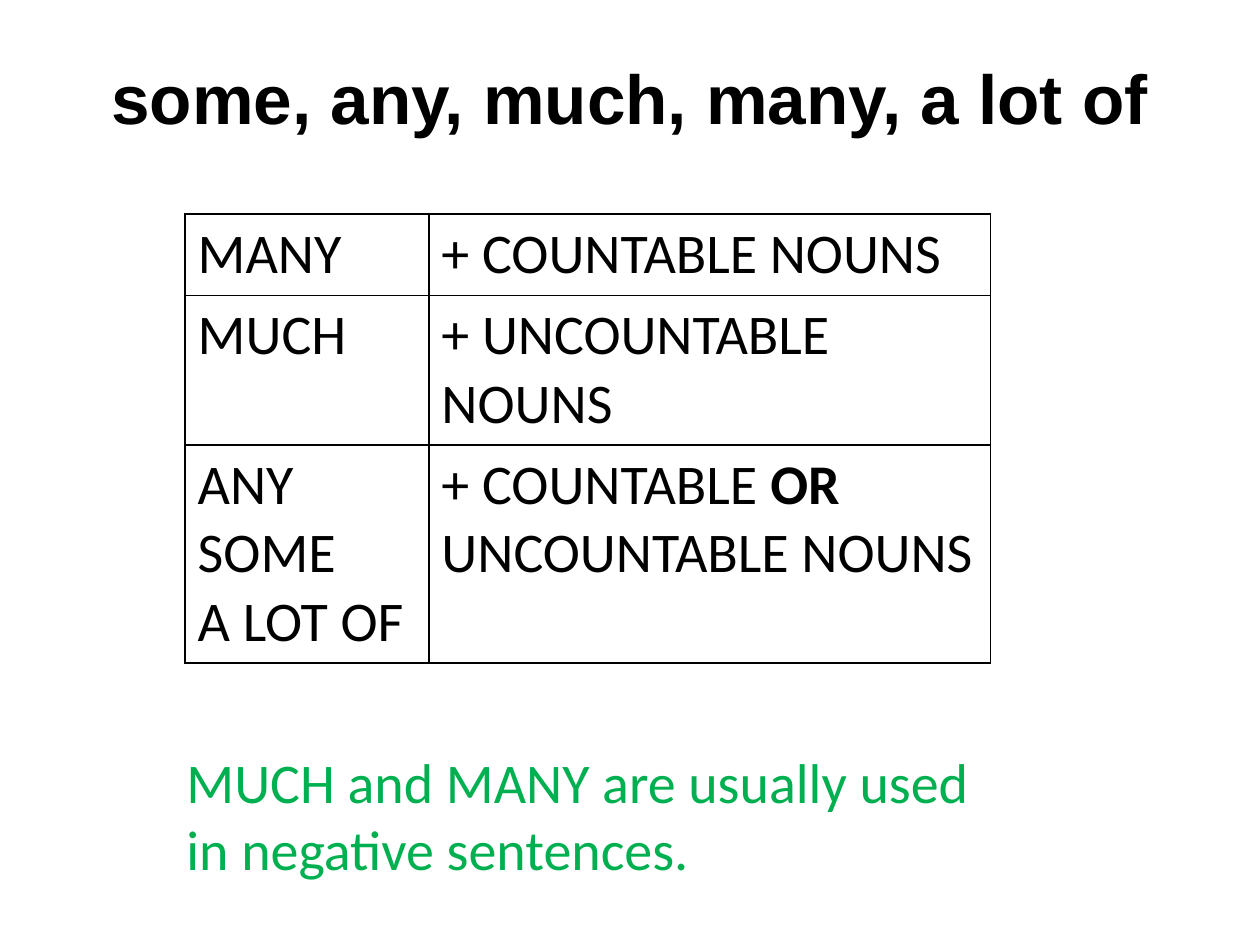
from lxml.etree import SubElement
from pptx import Presentation
from pptx.dml.color import RGBColor
from pptx.enum.text import MSO_ANCHOR, MSO_AUTO_SIZE, PP_ALIGN
from pptx.oxml import parse_xml
from pptx.oxml.ns import nsdecls, qn
from pptx.util import Pt

# Content: a cell or box is a list of paragraphs, each a list of (text, bold)
TITLE = "some, any, much, many, a lot of"
RULES = [
    ([[("MANY", False)]], [[("+ COUNTABLE NOUNS", False)]]),
    ([[("MUCH", False)]], [[("+ UNCOUNTABLE NOUNS", False)]]),
    (
        [[("ANY", False)], [("SOME", False)], [("A LOT OF", False)]],
        [[("+ COUNTABLE ", False), ("OR", True), (" UNCOUNTABLE NOUNS", False)]],
    ),
]
NOTE = [
    [("MUCH and MANY are usually used", False)],
    [("in negative sentences.", False)],
]

# Layout in points
TITLE_BOX = (36, 21.6, 648, 67)
TABLE_LEFT, TABLE_TOP = 105.8, 122.4
COLUMN_WIDTHS = (139.3, 321)
ROW_LINES = (1, 2, 3)
LINE_HEIGHT, CELL_PADDING = 39, 7.2
NOTE_BOX = (99.4, 423.4, 473.8, 85)

BODY = {"name": "Calibri", "size": Pt(32)}
HEADING = {"name": "Arial", "size": Pt(39.6)}
BLACK, GREEN = "000000", "00B050"


def color(hex_value):
    return RGBColor.from_string(hex_value)


def write(frame, paragraphs, font, hex_value):
    for index, runs in enumerate(paragraphs):
        paragraph = frame.add_paragraph() if index else frame.paragraphs[0]
        for text, bold in runs:
            run = paragraph.add_run()
            run.text = text
            for name, value in {**font, "bold": bold}.items():
                setattr(run.font, name, value)
            run.font.color.rgb = color(hex_value)


def add_borders(cell, hex_value, width):
    properties = cell._tc.get_or_add_tcPr()
    for index, side in enumerate(("lnL", "lnR", "lnT", "lnB")):
        line = parse_xml(f'<a:{side} {nsdecls("a")} w="{Pt(width)}"/>')
        fill = SubElement(line, qn("a:solidFill"))
        SubElement(fill, qn("a:srgbClr")).set("val", hex_value)
        properties.insert(index, line)


def main():
    presentation = Presentation()
    presentation.slide_width, presentation.slide_height = Pt(720), Pt(540)
    slide = presentation.slides.add_slide(presentation.slide_layouts[5])

    # Title
    title = slide.shapes.title
    title.left, title.top, title.width, title.height = map(Pt, TITLE_BOX)
    title.text_frame.vertical_anchor = MSO_ANCHOR.MIDDLE
    write(title.text_frame, [[(TITLE, True)]], HEADING, BLACK)
    title.text_frame.paragraphs[0].alignment = PP_ALIGN.CENTER

    # Table of quantifiers
    row_heights = [LINE_HEIGHT * lines + CELL_PADDING for lines in ROW_LINES]
    table = slide.shapes.add_table(
        len(RULES), len(COLUMN_WIDTHS), Pt(TABLE_LEFT), Pt(TABLE_TOP),
        Pt(sum(COLUMN_WIDTHS)), Pt(sum(row_heights)),
    ).table
    table.first_row = table.horz_banding = False
    for column, width in zip(table.columns, COLUMN_WIDTHS):
        column.width = Pt(width)
    for row, height, contents in zip(table.rows, row_heights, RULES):
        row.height = Pt(height)
        for cell, paragraphs in zip(row.cells, contents):
            cell.fill.background()
            add_borders(cell, BLACK, 1)
            write(cell.text_frame, paragraphs, BODY, BLACK)

    # Note on usage
    note = slide.shapes.add_textbox(*map(Pt, NOTE_BOX))
    note.text_frame.word_wrap = False
    note.text_frame.auto_size = MSO_AUTO_SIZE.SHAPE_TO_FIT_TEXT
    write(note.text_frame, NOTE, BODY, GREEN)

    presentation.save("out.pptx")


if __name__ == "__main__":
    main()
